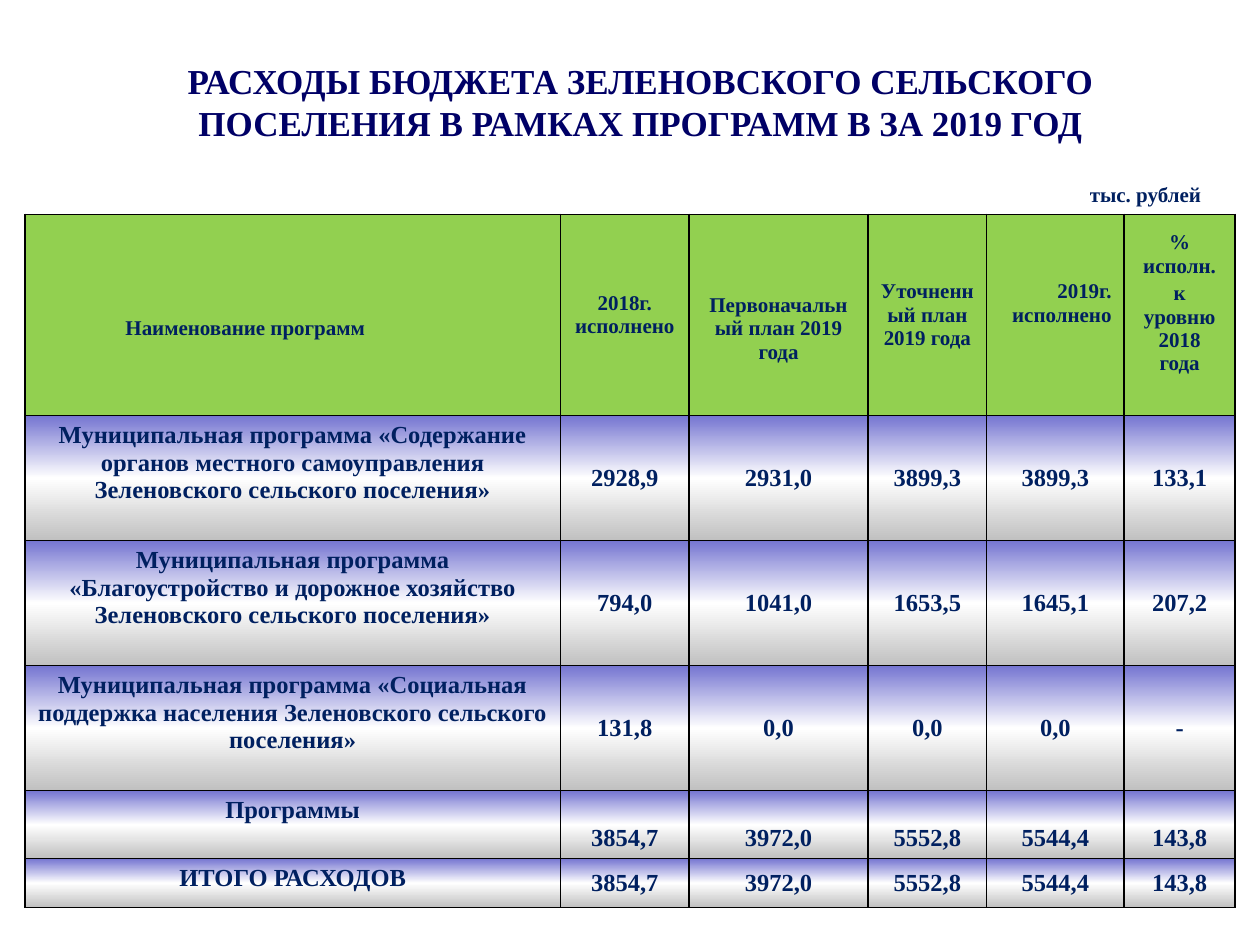
import lxml.etree
import pptx
import pptx.dml.color
import pptx.enum.text
import pptx.oxml
import pptx.oxml.ns
import pptx.util
from pptx.util import Cm

FONT = "Times New Roman"
TITLE_COLOR = "000066"
TEXT_COLOR = "002060"
HEADER_FILL = "92D050"
BODY_GRADIENT = [(0, "7575D1"), (50, "FFFFFF"), (100, "C0C0C0")]
CENTER = pptx.enum.text.PP_ALIGN.CENTER
LEFT = pptx.enum.text.PP_ALIGN.LEFT
RIGHT = pptx.enum.text.PP_ALIGN.RIGHT
TOP = pptx.enum.text.MSO_ANCHOR.TOP
MIDDLE = pptx.enum.text.MSO_ANCHOR.MIDDLE

COLUMN_WIDTHS = [10.8, 2.59, 3.61, 2.39, 2.77, 2.24]
ROW_HEIGHTS = [4.06, 2.52, 2.52, 2.52, 1.37, 0.99]

# Paragraphs of each heading, then its cell format
HEADINGS = [
    (["Наименование программ"],
     {"alignment": LEFT, "anchor": TOP, "left": 2.03, "top": 2.06}),
    (["2018г.", "исполнено"], {}),
    (["Первоначальный план 2019 года"], {"top": 0.69}),
    (["Уточненный план 2019 года"], {}),
    (["2019г.", "исполнено"], {"alignment": RIGHT, "bottom": 0.6}),
    (["% исполн.", "к уровню 2018 года"], {"bottom": 0.6, "space": 2.4}),
]

PROGRAMS = [
    ("Муниципальная программа «Содержание органов местного самоуправления "
     "Зеленовского сельского поселения»",
     ["2928,9", "2931,0", "3899,3", "3899,3", "133,1"]),
    ("Муниципальная программа «Благоустройство и дорожное хозяйство "
     "Зеленовского сельского поселения»",
     ["794,0", "1041,0", "1653,5", "1645,1", "207,2"]),
    ("Муниципальная программа «Социальная поддержка населения "
     "Зеленовского сельского поселения»",
     ["131,8", "0,0", "0,0", "0,0", "-"]),
    ("Программы", ["3854,7", "3972,0", "5552,8", "5544,4", "143,8"]),
    ("ИТОГО РАСХОДОВ", ["3854,7", "3972,0", "5552,8", "5544,4", "143,8"]),
]
SUBTOTAL = "Программы"


def color(value):
    return pptx.dml.color.RGBColor.from_string(value)


def add_text(text_frame, lines, size, text_color, alignment, space=0):
    for index, line in enumerate(lines):
        paragraph = text_frame.paragraphs[0] if index == 0 else text_frame.add_paragraph()
        paragraph.alignment = alignment
        paragraph.space_before = pptx.util.Pt(space if index else 0)
        run = paragraph.add_run()
        run.text = line
        run.font.name = FONT
        run.font.size = pptx.util.Pt(size)
        run.font.bold = True
        run.font.color.rgb = color(text_color)


def add_element(parent, tag, **attributes):
    element = lxml.etree.SubElement(parent, pptx.oxml.ns.qn(tag))
    for name, value in attributes.items():
        element.set(name, str(value))
    return element


def add_borders(cell):
    properties = cell._tc.get_or_add_tcPr()
    for side in ("a:lnL", "a:lnR", "a:lnT", "a:lnB"):
        line = add_element(properties, side, w=pptx.util.Pt(1))
        add_element(add_element(line, "a:solidFill"), "a:srgbClr", val="000000")


def fill_gradient(cell, stops):
    """Fill the cell from top to bottom with (percent, colour) stops."""
    gradient = add_element(cell._tc.get_or_add_tcPr(), "a:gradFill", rotWithShape=1)
    stop_list = add_element(gradient, "a:gsLst")
    for percent, value in stops:
        stop = add_element(stop_list, "a:gs", pos=percent * 1000)
        add_element(stop, "a:srgbClr", val=value)
    add_element(gradient, "a:lin", ang=90 * 60000, scaled=0)


def format_cell(cell, lines, size, alignment=CENTER, anchor=MIDDLE,
                left=0.25, top=0.13, bottom=0.13, space=0):
    cell.margin_left, cell.margin_right = Cm(left), Cm(0.25)
    cell.margin_top, cell.margin_bottom = Cm(top), Cm(bottom)
    cell.vertical_anchor = anchor
    add_text(cell.text_frame, lines, size, TEXT_COLOR, alignment, space)
    add_borders(cell)


def add_title(slide, text):
    title = slide.shapes.title
    title.left, title.top, title.width, title.height = Cm(1.3), Cm(0), Cm(23.22), Cm(4.11)
    title.text_frame.auto_size = pptx.enum.text.MSO_AUTO_SIZE.NONE
    title.text_frame.vertical_anchor = MIDDLE
    add_text(title.text_frame, [text], 20, TITLE_COLOR, CENTER)


def add_unit_label(slide, text):
    label = slide.shapes.add_textbox(Cm(21.72), Cm(3.53), Cm(3.6), Cm(0.77))
    label.text_frame.word_wrap = True
    add_text(label.text_frame, [text], 12, TEXT_COLOR, LEFT)


def add_expense_table(slide):
    table = slide.shapes.add_table(
        len(ROW_HEIGHTS), len(COLUMN_WIDTHS), Cm(0.5), Cm(4.32),
        Cm(sum(COLUMN_WIDTHS)), Cm(sum(ROW_HEIGHTS))).table
    table.first_row = table.horz_banding = False
    for column, width in zip(table.columns, COLUMN_WIDTHS):
        column.width = Cm(width)
    for row, height in zip(table.rows, ROW_HEIGHTS):
        row.height = Cm(height)

    for index, (lines, cell_format) in enumerate(HEADINGS):
        cell = table.cell(0, index)
        format_cell(cell, lines, 12, **cell_format)
        cell.fill.solid()
        cell.fill.fore_color.rgb = color(HEADER_FILL)

    for row_index, (name, values) in enumerate(PROGRAMS, start=1):
        value_top = 0.68 if name == SUBTOTAL else 0.13
        for column_index, text in enumerate([name] + values):
            cell = table.cell(row_index, column_index)
            if column_index == 0:
                format_cell(cell, [text], 14, anchor=TOP)
            else:
                format_cell(cell, [text], 14, top=value_top)
            fill_gradient(cell, BODY_GRADIENT)


def main():
    presentation = pptx.Presentation()
    presentation.slide_width, presentation.slide_height = Cm(25.4), Cm(19.05)
    slide = presentation.slides.add_slide(presentation.slide_layouts[5])
    add_title(slide, "РАСХОДЫ БЮДЖЕТА ЗЕЛЕНОВСКОГО СЕЛЬСКОГО ПОСЕЛЕНИЯ "
                     "В РАМКАХ ПРОГРАММ В ЗА 2019 ГОД")
    add_expense_table(slide)
    add_unit_label(slide, "тыс. рублей")
    presentation.save("out.pptx")


if __name__ == "__main__":
    main()
